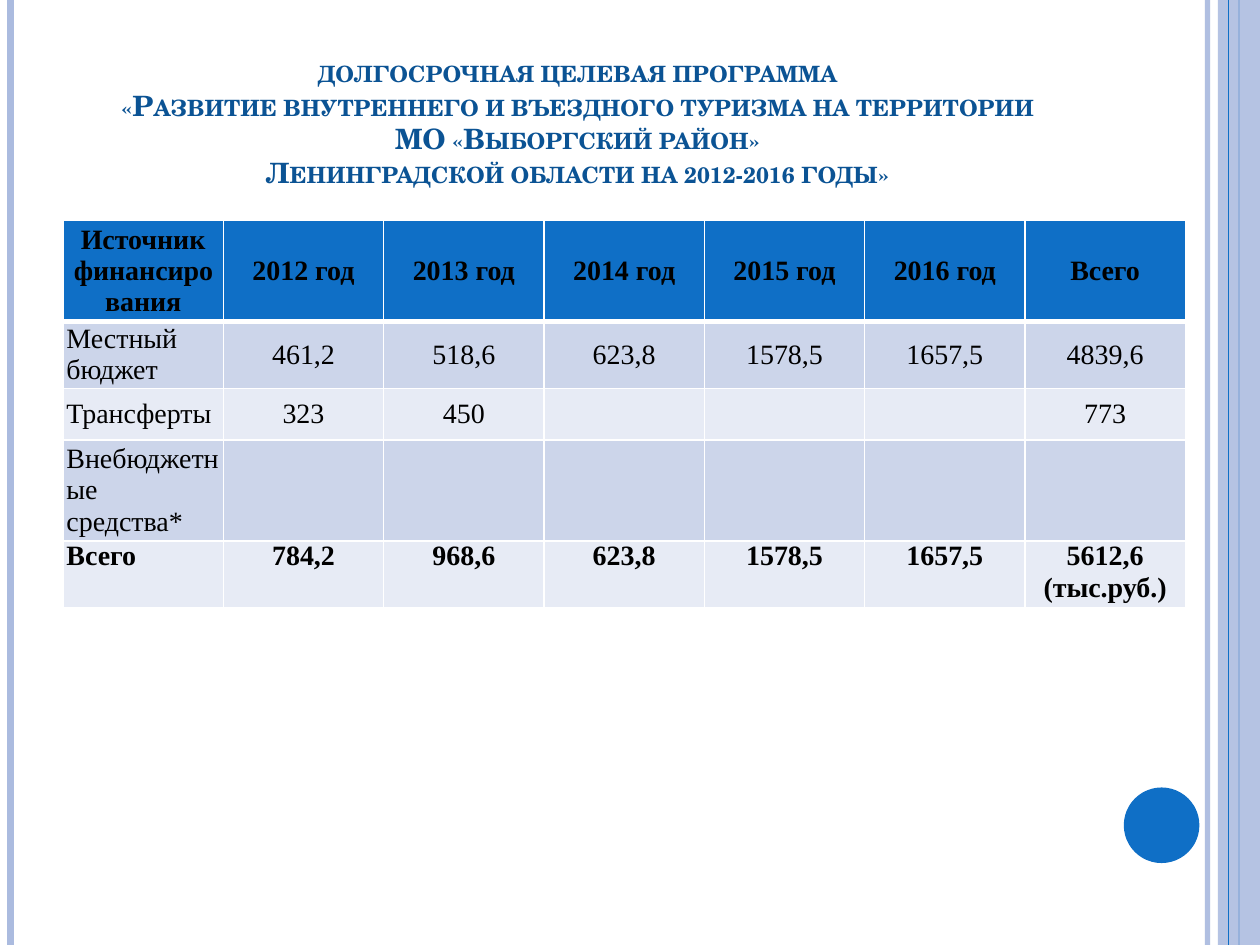
from lxml.etree import SubElement
from pptx import Presentation
from pptx.dml.color import RGBColor
from pptx.enum.shapes import MSO_CONNECTOR, MSO_SHAPE
from pptx.enum.text import MSO_ANCHOR, PP_ALIGN
from pptx.oxml.ns import qn
from pptx.util import Pt

COLORS = {
    "blue": "0F6FC6",
    "lavender": "ABBBDF",
    "title": "0B5394",
    "text": "000000",
    "border": "FFFFFF",
    "odd_row": "CCD5EA",
    "even_row": "E7EBF5",
}

TITLE = "\v".join([
    "долгосрочная целевая программа",
    "«Развитие внутреннего и въездного туризма на территории",
    "МО «Выборгский район»",
    "Ленинградской области на 2012-2016 годы»",
])
YEARS = [f"{year} год" for year in range(2012, 2017)]
FUNDING = [
    ["Источник финансирования", *YEARS, "Всего"],
    ["Местный бюджет", "461,2", "518,6", "623,8", "1578,5", "1657,5", "4839,6"],
    ["Трансферты", "323", "450", "", "", "", "773"],
    ["Внебюджетные средства*", "", "", "", "", "", ""],
    ["Всего", "784,2", "968,6", "623,8", "1578,5", "1657,5", "5612,6 (тыс.руб.)"],
]
ROW_HEIGHTS = [53, 35.5, 29.5, 53, 35.5]


def rgb(name):
    return RGBColor.from_string(COLORS[name])


def set_font(paragraph, family, color, bold):
    font = paragraph.font
    font.name, font.size, font.bold = family, Pt(16), bold
    font.color.rgb = rgb(color)
    return font


def set_alpha(element, percent):
    color = element.find(".//" + qn("a:srgbClr"))
    SubElement(color, qn("a:alpha"), val=str(percent * 1000))


def add_stripe(slide, x, top, height, color, weight):
    stripe = slide.shapes.add_connector(
        MSO_CONNECTOR.STRAIGHT, Pt(x), Pt(top), Pt(x), Pt(top + height))
    stripe.line.color.rgb = rgb(color)
    stripe.line.width = Pt(weight)
    SubElement(stripe._element.spPr, qn("a:effectLst"))
    return stripe


def add_solid(slide, kind, left, top, width, height, color):
    solid = slide.shapes.add_shape(kind, Pt(left), Pt(top), Pt(width), Pt(height))
    solid.shadow.inherit = False
    solid.fill.solid()
    solid.fill.fore_color.rgb = rgb(color)
    solid.line.fill.background()
    return solid


def add_frame(slide, left, top, width, height):
    right = left + width
    inner = add_stripe(slide, right - 30, top, height, "lavender", 3)
    set_alpha(inner._element.spPr, 93)
    add_stripe(slide, left + 6, top, height, "lavender", 4.5)
    add_stripe(slide, right - 12, top, height, "blue", 1.5)
    band = add_solid(slide, MSO_SHAPE.RECTANGLE, right - 24, top, 24, height, "lavender")
    set_alpha(band._element.spPr, 87)
    add_stripe(slide, right - 18, top, height, "blue", 0.75)
    add_solid(slide, MSO_SHAPE.OVAL, right - 77.8, top + height - 90, 43.2, 43.2, "blue")


def add_title(slide, left, top, width, height):
    box = slide.shapes.add_textbox(Pt(left), Pt(top), Pt(width), Pt(height))
    frame = box.text_frame
    frame.word_wrap = True
    frame.vertical_anchor = MSO_ANCHOR.BOTTOM
    frame.text = TITLE
    heading = frame.paragraphs[0]
    heading.alignment = PP_ALIGN.CENTER
    font = set_font(heading, "TeX Gyre Schola", "title", True)
    font._rPr.set("cap", "small")


def set_borders(cell, top, bottom):
    properties = cell._tc.get_or_add_tcPr()
    for side, weight in (("L", 1), ("R", 1), ("T", top), ("B", bottom)):
        border = SubElement(properties, qn(f"a:ln{side}"), w=str(Pt(weight)))
        fill = SubElement(border, qn("a:solidFill"))
        SubElement(fill, qn("a:srgbClr"), val=COLORS["border"])


def fill_cell(cell, text, row, column):
    last = len(FUNDING) - 1
    set_borders(cell, 3 if row == 1 else 1, 3 if row == 0 else 1)
    cell.fill.solid()
    cell.fill.fore_color.rgb = rgb(
        "blue" if row == 0 else "odd_row" if row % 2 else "even_row")
    cell.margin_left = cell.margin_right = Pt(2)
    cell.margin_top = cell.margin_bottom = Pt(0)
    cell.vertical_anchor = MSO_ANCHOR.TOP if row == last else MSO_ANCHOR.MIDDLE
    cell.text = text
    entry = cell.text_frame.paragraphs[0]
    entry.alignment = PP_ALIGN.LEFT if row and column == 0 else PP_ALIGN.CENTER
    set_font(entry, "Times New Roman", "text", row in (0, last))


def add_funding_table(slide, left, top, width):
    columns = len(FUNDING[0])
    table = slide.shapes.add_table(
        len(FUNDING), columns, Pt(left), Pt(top), Pt(width), Pt(sum(ROW_HEIGHTS))).table
    for column in table.columns:
        column.width = Pt(width / columns)
    for row, height in enumerate(ROW_HEIGHTS):
        table.rows[row].height = Pt(height)
        for column, text in enumerate(FUNDING[row]):
            fill_cell(table.cell(row, column), text, row, column)


def main():
    presentation = Presentation()
    presentation.slide_width, presentation.slide_height = Pt(720), Pt(540)
    slide = presentation.slides.add_slide(presentation.slide_layouts[6])
    add_frame(slide, 0, 0, 720, 540)
    add_title(slide, 36, 21.6, 588, 90)
    add_funding_table(slide, 36, 126, 641.5)
    presentation.save("out.pptx")


if __name__ == "__main__":
    main()
